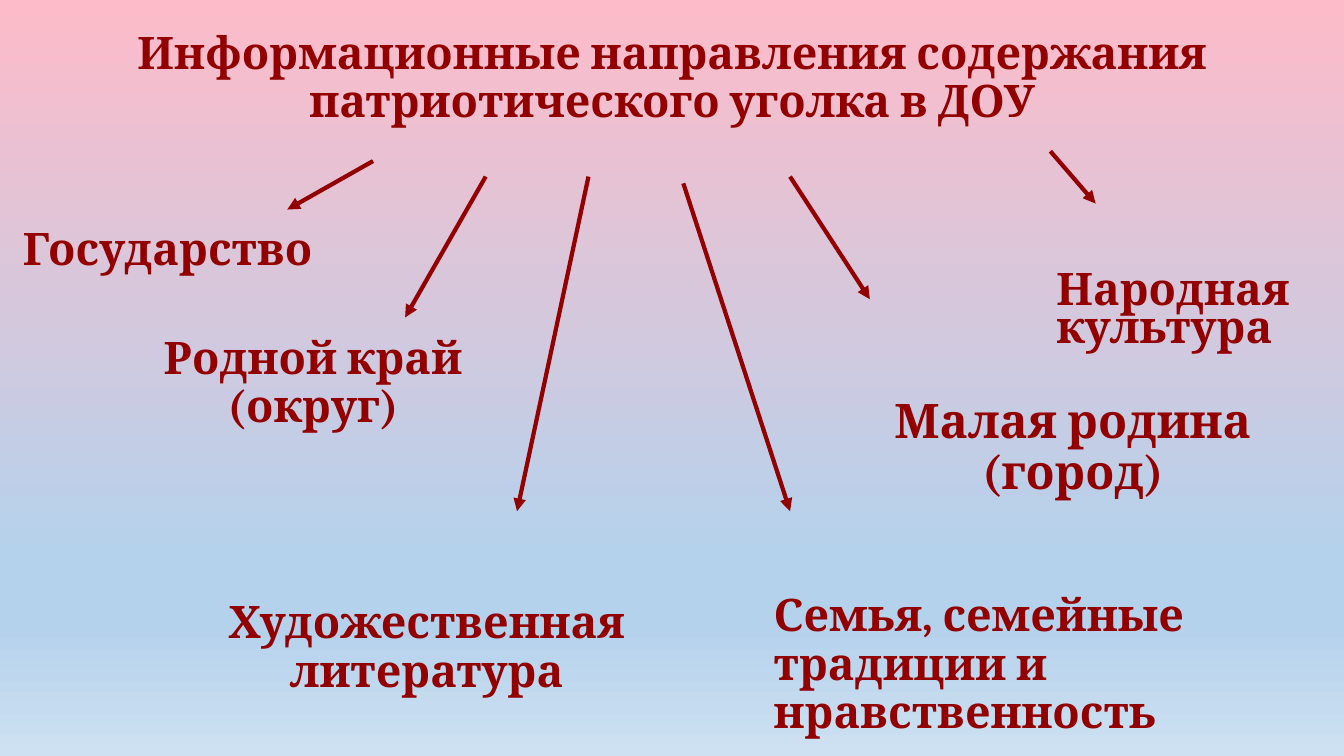
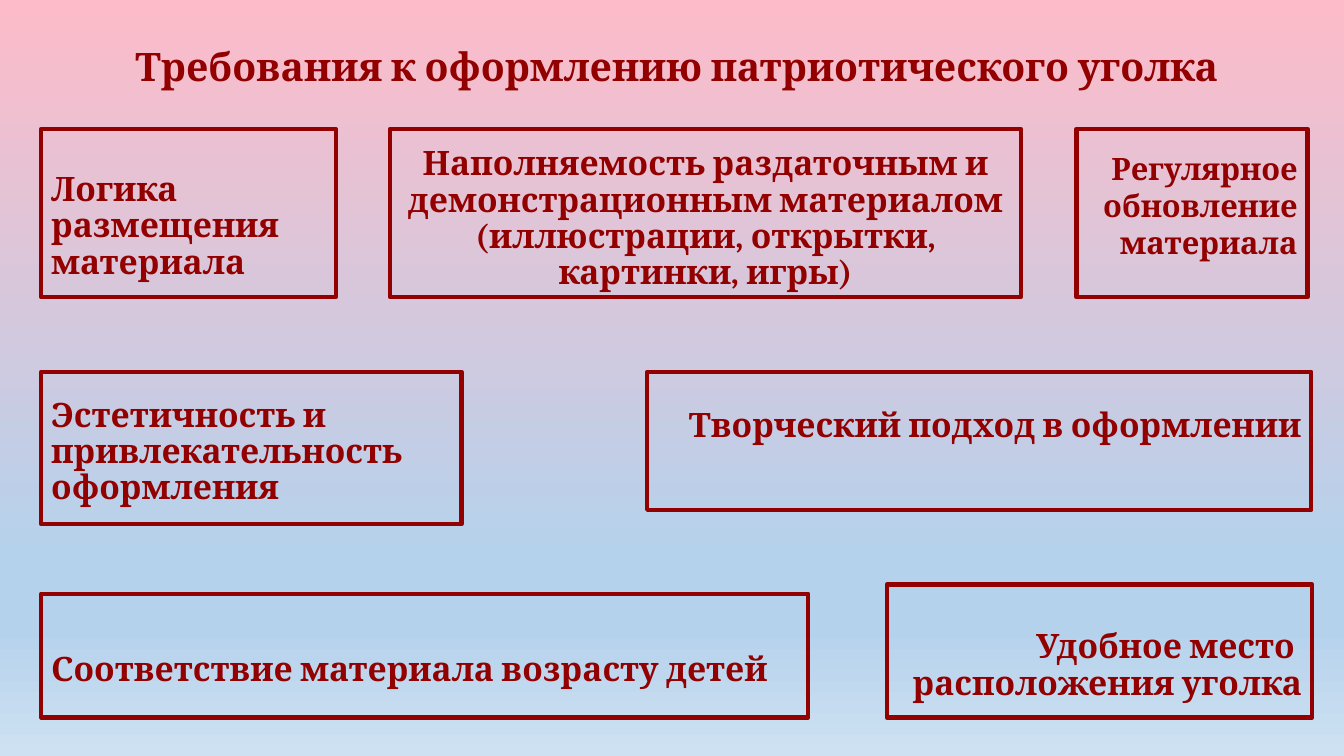
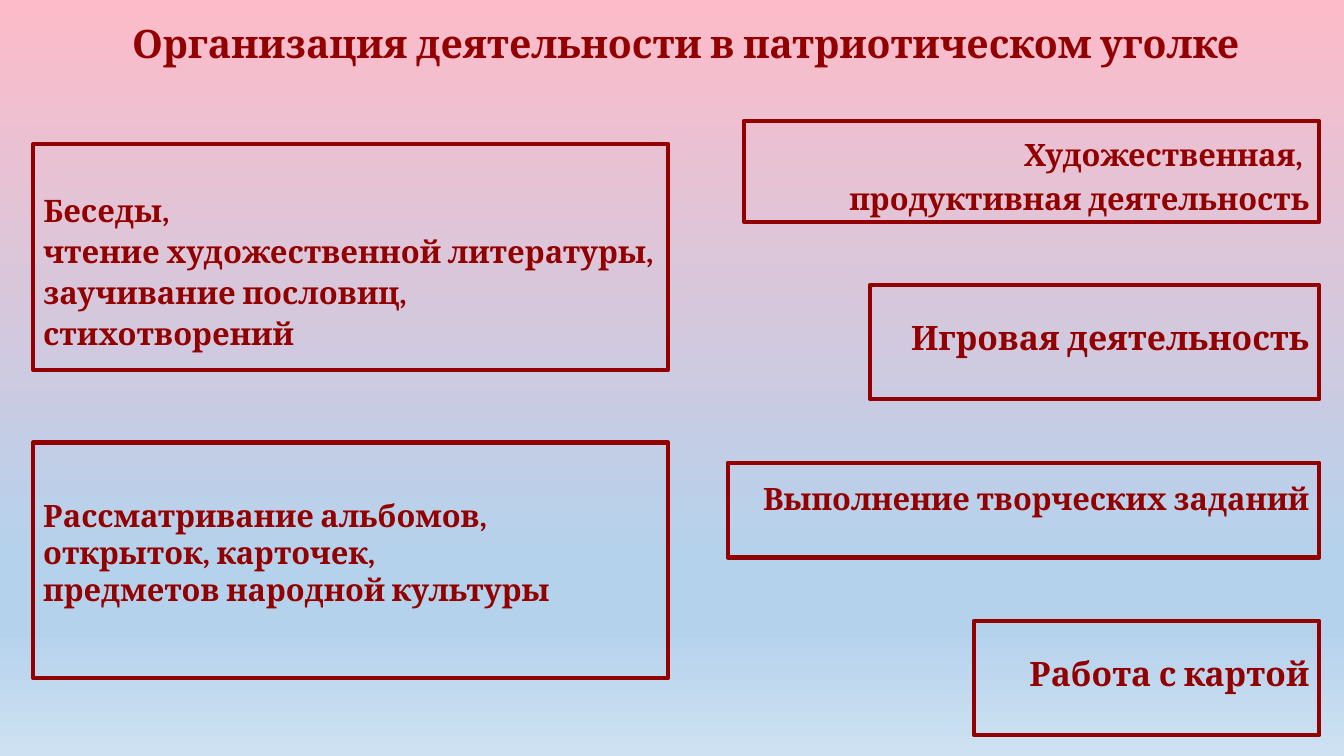
import pptx
import pptx.dml.color
import pptx.enum.shapes
import pptx.enum.text
import pptx.oxml
import pptx.oxml.ns
import pptx.util
from copy import deepcopy

Cm, Pt = pptx.util.Cm, pptx.util.Pt
qn = pptx.oxml.ns.qn
ANCHOR = pptx.enum.text.MSO_ANCHOR
LEFT, CENTER, RIGHT = (pptx.enum.text.PP_ALIGN.LEFT, pptx.enum.text.PP_ALIGN.CENTER,
                       pptx.enum.text.PP_ALIGN.RIGHT)

DARK_RED = "920000"
LINE_WIDTH = Pt(3)
BACKGROUND = [(0, "FDBBC9"), (0.74, "B5D2EC"), (0.83, "B5D2EC"), (1, "CEE1F2")]


def colour(value):
    return pptx.dml.color.RGBColor.from_string(value)


def write(box, text, size, align, spacing, anchor, top_inset=0.13):
    """Fill a shape with bold dark red text, one paragraph for each line."""
    frame = box.text_frame
    frame.text = text
    frame.word_wrap = True
    frame.auto_size = pptx.enum.text.MSO_AUTO_SIZE.NONE
    frame.vertical_anchor = anchor
    frame.margin_top = Cm(top_inset)
    for para in frame.paragraphs:
        para.alignment = align
        para.line_spacing = spacing
        para.space_before = Pt(0)
        para.font.name = "Cambria"
        para.font.size = Pt(size)
        para.font.bold = True
        para.font.color.rgb = colour(DARK_RED)


# Title, its place and size, framed labels or not, then the labels:
# text, left, top, width, height, top inset, size, alignment, line spacing
RIGHT_EDGE = 33.25
pages = [
    ("Информационные направления содержания патриотического уголка в ДОУ",
     (2.34, 0.38, 29.21, 3.23), 32, False, [
         ("Государство", 0.33, 4.62, 8.43, 2.46, 1.1, 32, LEFT, 0.9),
         ("Родной край\n(округ)", 2.34, 8.33, 11.1, 3.43, 0.13, 32, CENTER, 0.9),
         ("Народная культура", 26.37, 6.81, 7.1, 2.3, 0.13, 32, LEFT, 0.7),
         ("Малая родина\n(город)", 21.77, 9.88, 10.54, 4.06, 0.13, 34, CENTER, 0.9),
         ("Семья, семейные традиции и нравственность",
          19.25, 14.81, 13.51, 4.1, 0.13, 32, LEFT, 0.9),
         ("Художественная литература", 5.33, 14.99, 10.85, 3.5, 0.13, 32, CENTER, 0.9),
     ]),
    ("Требования к оформлению патриотического уголка",
     (1.04, 0.23, 32.03, 3.02), 28, True, [
         ("Логика размещения материала", 1.04, 3.25, 7.42, 4.24, 1.1, 24, LEFT, 0.9),
         ("Наполняемость раздаточным и демонстрационным материалом "
          "(иллюстрации, открытки, картинки, игры)",
          9.83, 3.25, 15.9, 4.24, 0.45, 24, CENTER, 0.9),
         ("Регулярное обновление материала", 27.13, 3.25, 5.82, 4.24, 0.53, 22, RIGHT, 1.0),
         ("Эстетичность и привлекательность оформления",
          1.04, 9.37, 10.59, 3.84, 0.66, 24, LEFT, 0.9),
         ("Творческий подход в оформлении", 16.31, 9.37, 16.74, 3.48, 0.93, 24, RIGHT, 0.9),
         ("Соответствие материала возрасту детей",
          1.04, 14.96, 19.33, 3.12, 1.47, 24, LEFT, 0.9),
         ("Удобное место \nрасположения уголка",
          22.35, 14.73, 10.72, 3.35, 1.14, 24, RIGHT, 0.9),
     ]),
    ("Организация деятельности в патриотическом уголке",
     (1.32, 0, 31.93, 2.29), 28, True, [
         ("Беседы,\nчтение художественной литературы,\nзаучивание пословиц, стихотворений",
          0.84, 3.63, 16, 5.69, 1.11, 22.1, LEFT, 1.1),
         ("Рассматривание альбомов, открыток, карточек,\nпредметов народной культуры",
          0.84, 11.15, 16, 5.94, 1.37, 22, LEFT, 1.0),
         ("Художественная, \nпродуктивная деятельность",
          RIGHT_EDGE - 14.5, 3.05, 14.5, 2.54, 0.18, 22, RIGHT, 1.2),
         ("Игровая деятельность",
          RIGHT_EDGE - 11.33, 7.19, 11.33, 2.87, 0.91, 24, RIGHT, 0.9),
         ("Выполнение творческих заданий",
          RIGHT_EDGE - 14.91, 11.66, 14.91, 2.39, 0.43, 22, RIGHT, 1.0),
         ("Работа с картой",
          RIGHT_EDGE - 8.71, 15.65, 8.71, 2.87, 0.91, 24, RIGHT, 0.9),
     ]),
]

deck = pptx.Presentation()
deck.slide_width, deck.slide_height = Cm(33.87), Cm(19.05)

# Shared background on the master
master = deck.slide_master
fill = master.background.fill
fill.gradient()
fill.gradient_angle = 270
stop_list = master.element.find(".//" + qn("a:gsLst"))
while len(stop_list) < len(BACKGROUND):
    stop_list.append(deepcopy(stop_list[0]))
for stop, (position, value) in zip(fill.gradient_stops, BACKGROUND):
    stop.position = position
    stop.color.rgb = colour(value)

for heading, place, heading_size, framed, labels in pages:
    page = deck.slides.add_slide(deck.slide_layouts[5])
    title = page.shapes.title
    title.left, title.top, title.width, title.height = [Cm(length) for length in place]
    write(title, heading, heading_size, CENTER, 0.9, ANCHOR.MIDDLE)

    for text, left, top, width, height, inset, size, align, spacing in labels:
        area = [Cm(length) for length in (left, top, width, height)]
        if framed:
            box = page.shapes.add_shape(pptx.enum.shapes.MSO_SHAPE.RECTANGLE, *area)
            box.shadow.inherit = False
            box.fill.background()
            box.line.color.rgb = colour(DARK_RED)
            box.line.width = LINE_WIDTH
        else:
            box = page.shapes.add_textbox(*area)
        write(box, text, size, align, spacing, ANCHOR.TOP, inset)

# Arrows from the first title to its labels
arrows = [
    (9.4, 4.06, 7.24, 5.28),
    (12.24, 4.45, 10.21, 8),
    (14.83, 4.45, 13.03, 12.88),
    (17.22, 4.62, 19.91, 12.88),
    (19.91, 4.45, 21.92, 7.54),
    (26.47, 3.81, 27.61, 5.13),
]
for ends in arrows:
    arrow = deck.slides[0].shapes.add_connector(
        pptx.enum.shapes.MSO_CONNECTOR.STRAIGHT, *[Cm(length) for length in ends])
    arrow.line.color.rgb = colour(DARK_RED)
    arrow.line.width = LINE_WIDTH
    head = pptx.oxml.parse_xml(
        '<a:tailEnd xmlns:a="http://schemas.openxmlformats.org/drawingml/2006/main"'
        ' type="triangle"/>')
    properties = arrow.element.spPr
    properties.find(qn("a:ln")).append(head)
    properties.append(properties.makeelement(qn("a:effectLst"), {}))

deck.save("out.pptx")
